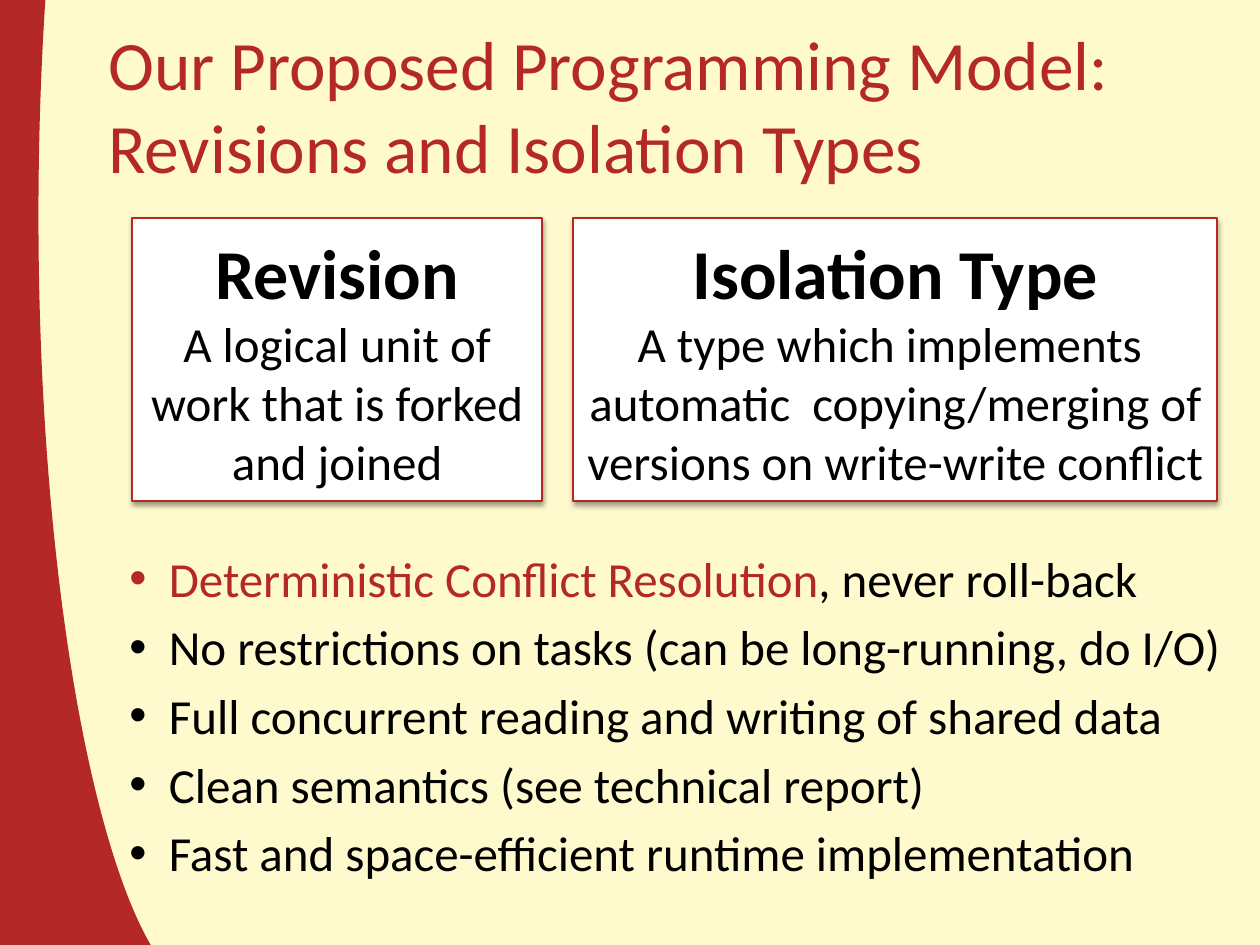
"""Build the slide on revisions and isolation types."""
from dataclasses import dataclass

from lxml.etree import SubElement
from pptx import Presentation
from pptx.dml.color import RGBColor
from pptx.enum.shapes import MSO_SHAPE
from pptx.enum.text import MSO_ANCHOR, MSO_AUTO_SIZE, PP_ALIGN
from pptx.oxml import parse_xml
from pptx.oxml.ns import nsdecls, qn
from pptx.shapes.autoshape import Shape
from pptx.slide import Slide
from pptx.text.text import _Paragraph, _Run
from pptx.util import Pt

CREAM = RGBColor(0xFF, 0xFA, 0xCD)
RED = RGBColor(0xB4, 0x28, 0x28)
BLACK = RGBColor(0, 0, 0)
WHITE = RGBColor(0xFF, 0xFF, 0xFF)
FONT = "Calibri"
TEXT_SIZE = 28
BOX_TOP, BOX_HEIGHT = 124.5, 162


@dataclass
class Definition:
    term: str
    meaning: str
    left: float
    width: float


@dataclass
class Benefit:
    plain: str
    highlight: str = ""


DEFINITIONS = [
    Definition("Revision", "A logical unit of work that is forked and joined", 75.6, 234),
    Definition(
        "Isolation Type",
        "A type which implements  automatic  copying/merging of versions on write-write conflict",
        327.6,
        368,
    ),
]
BENEFITS = [
    Benefit(", never roll-back", "Deterministic Conflict Resolution"),
    Benefit("No restrictions on tasks (can be long-running, do I/O)"),
    Benefit("Full concurrent reading and writing of shared data"),
    Benefit("Clean semantics (see technical report)"),
    Benefit("Fast and space-efficient runtime implementation"),
]


def format_run(run: _Run, size: float, color: RGBColor, bold: bool = False) -> None:
    run.font.name = FONT
    run.font.size = Pt(size)
    run.font.bold = bold
    run.font.color.rgb = color


def place(shape: Shape, left: float, top: float, width: float, height: float) -> None:
    shape.left, shape.top = Pt(left), Pt(top)
    shape.width, shape.height = Pt(width), Pt(height)


def add_side_arc(slide: Slide) -> None:
    arc = slide.shapes.add_shape(MSO_SHAPE.ARC, Pt(-18), Pt(-347.8), Pt(221.8), Pt(941.8))
    arc.adjustments[0], arc.adjustments[1] = 52.66, 146.34
    arc.shadow.inherit = False
    arc.fill.background()
    arc.line.color.rgb = RED
    arc.line.width = Pt(80)
    arc.element.getparent().insert(2, arc.element)


def fill_title(title: Shape) -> None:
    place(title, 54.7, 17.3, 632, 84.2)
    title.text_frame.text = "Our Proposed Programming Model: \vRevisions and Isolation Types"
    title.text_frame.vertical_anchor = MSO_ANCHOR.MIDDLE
    title.text_frame.auto_size = MSO_AUTO_SIZE.NONE
    heading = title.text_frame.paragraphs[0]
    heading.alignment = PP_ALIGN.LEFT
    for run in heading.runs:
        format_run(run, 39.6, RED)


def set_bullet(paragraph: _Paragraph) -> None:
    properties = paragraph._p.get_or_add_pPr()
    properties.set("marL", str(Pt(49.7)))
    properties.set("indent", str(Pt(-22.5)))
    SubElement(properties, qn("a:buFont")).set("typeface", "Arial")
    SubElement(properties, qn("a:buChar")).set("char", "•")


def fill_benefits(body: Shape) -> None:
    place(body, 39.6, 309.6, 680.4, 229)
    frame = body.text_frame
    frame.text = "\n".join(benefit.highlight or benefit.plain for benefit in BENEFITS)
    frame.auto_size = MSO_AUTO_SIZE.NONE
    for paragraph, benefit in zip(frame.paragraphs, BENEFITS):
        paragraph.level = 1
        set_bullet(paragraph)
        format_run(paragraph.runs[0], TEXT_SIZE, RED if benefit.highlight else BLACK)
        if benefit.highlight:
            ending = paragraph.add_run()
            ending.text = benefit.plain
            format_run(ending, TEXT_SIZE, BLACK)


def add_soft_shadow(shape: Shape) -> None:
    shape.element.spPr.append(parse_xml(
        f'<a:effectLst {nsdecls("a")}>'
        f'<a:outerShdw blurRad="{Pt(3.1)}" dist="{Pt(1.6)}" dir="5400000" rotWithShape="0">'
        f'<a:srgbClr val="{BLACK}"><a:alpha val="38000"/></a:srgbClr>'
        '</a:outerShdw></a:effectLst>'
    ))


def add_definition(slide: Slide, definition: Definition) -> None:
    box = slide.shapes.add_shape(
        MSO_SHAPE.RECTANGLE,
        Pt(definition.left), Pt(BOX_TOP), Pt(definition.width), Pt(BOX_HEIGHT),
    )
    box.fill.solid()
    box.fill.fore_color.rgb = WHITE
    box.line.color.rgb = RED
    box.line.width = Pt(1)
    add_soft_shadow(box)
    frame = box.text_frame
    frame.text = f"{definition.term}\n{definition.meaning}"
    frame.vertical_anchor = MSO_ANCHOR.MIDDLE
    term, meaning = frame.paragraphs
    term.alignment = meaning.alignment = PP_ALIGN.CENTER
    format_run(term.runs[0], 40, BLACK, bold=True)
    format_run(meaning.runs[0], TEXT_SIZE, BLACK)


def main() -> None:
    presentation = Presentation()
    presentation.slide_width, presentation.slide_height = Pt(720), Pt(540)
    slide = presentation.slides.add_slide(presentation.slide_layouts[1])
    slide.background.fill.solid()
    slide.background.fill.fore_color.rgb = CREAM
    add_side_arc(slide)
    fill_title(slide.shapes.title)
    fill_benefits(slide.placeholders[1])
    for definition in DEFINITIONS:
        add_definition(slide, definition)
    presentation.save("out.pptx")


if __name__ == "__main__":
    main()
